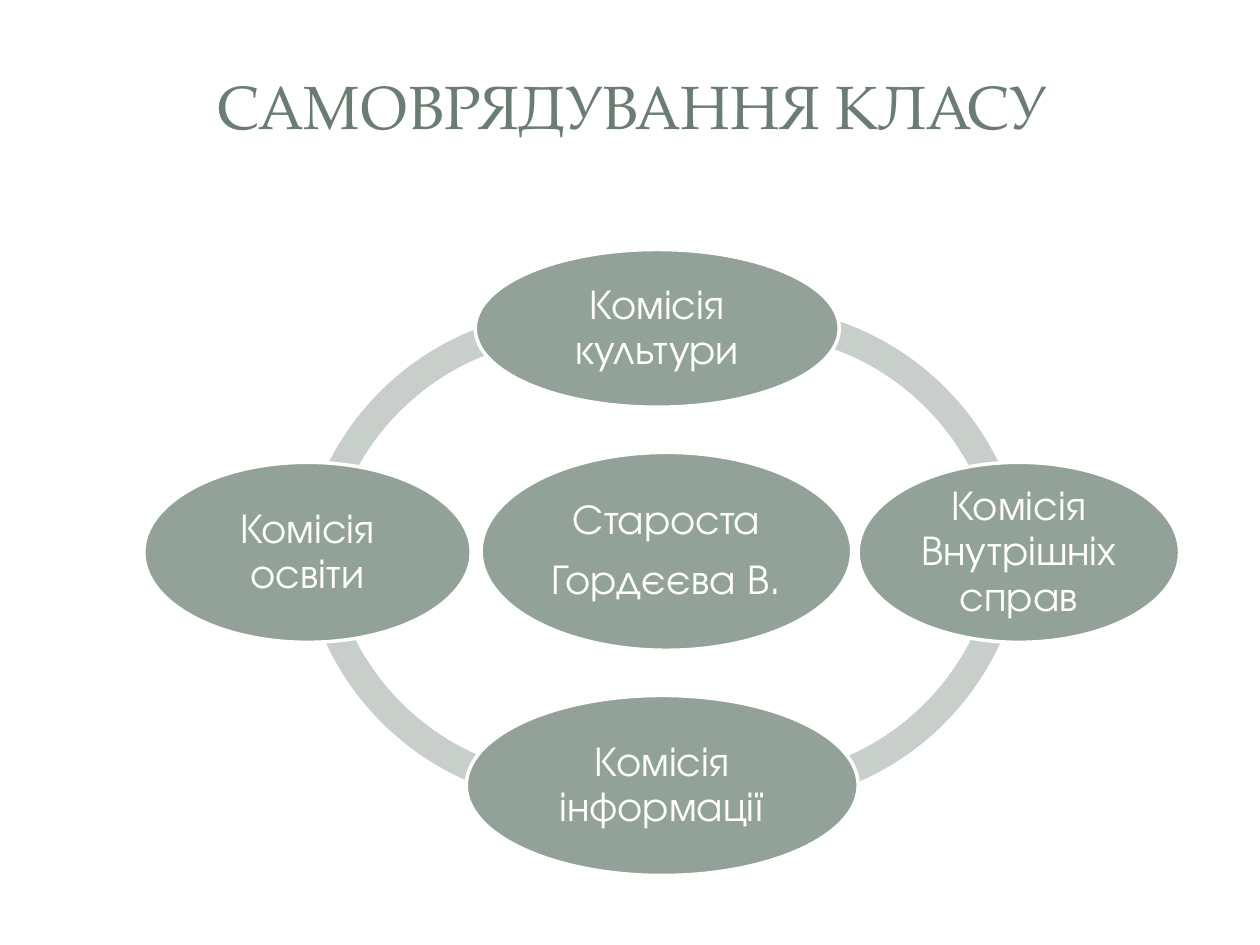
from pptx import Presentation
from pptx.dml.color import RGBColor
from pptx.enum.shapes import MSO_SHAPE
from pptx.enum.text import MSO_ANCHOR, PP_ALIGN
from pptx.util import Cm, Pt


def rgb(value):
    return RGBColor.from_string(value)


def write(sp, text, font, size, color, inset=0.25, line=1.0, after=0):
    """Fill a shape with centred text, one paragraph per line of text."""
    tf = sp.text_frame
    tf.word_wrap = True
    tf.vertical_anchor = MSO_ANCHOR.MIDDLE
    tf.margin_left = tf.margin_right = Cm(inset)
    tf.margin_top = tf.margin_bottom = Cm(min(inset, 0.13))
    tf.text = text
    for p in tf.paragraphs:
        p.alignment = PP_ALIGN.CENTER
        p.line_spacing = line
        p.space_after = Pt(after)
        for r in p.runs:
            r.font.name = font
            r.font.size = Pt(size)
            r.font.color.rgb = rgb(color)


prs = Presentation()
prs.slide_width, prs.slide_height = Cm(25.4), Cm(19.05)
s = prs.slides.add_slide(prs.slide_layouts[6])

title = s.shapes.add_textbox(Cm(1.3), Cm(0.53), Cm(22.86), Cm(3.18))
write(title, "САМОВРЯДУВАННЯ КЛАСУ", "TeX Gyre Pagella", 35, "6B7D72")

# Ring: left, top, start and end adjustment of each arc
ARC_SIZE = Cm(11.23)
arcs = [
    (6.02, 6.25, 112.63, 172.15),
    (6.05, 4.98, 43.33, 104.65),
    (9.45, 5.0, 3.22, 65.07),
    (9.47, 6.17, 150.16, 211.91),
]
for left, top, start, end in arcs:
    sp = s.shapes.add_shape(MSO_SHAPE.BLOCK_ARC, Cm(left), Cm(top), ARC_SIZE, ARC_SIZE)
    for i, value in enumerate((start, end, 0.05)):
        sp.adjustments[i] = value
    sp.shadow.inherit = False
    sp.fill.solid()
    sp.fill.fore_color.rgb = rgb("C8CECA")
    sp.line.fill.background()

# Class leader in the middle, commissions around
nodes = [
    ("Староста\nГордєєва В.", 9.7, 9.12, 7.47, 3.99),
    ("Комісія культури", 9.58, 5.03, 7.34, 3.18),
    ("Комісія Внутрішніх справ", 17.3, 9.32, 6.48, 3.63),
    ("Комісія інформації", 9.4, 14.02, 7.9, 3.63),
    ("Комісія освіти", 2.9, 9.32, 6.6, 3.63),
]
for text, left, top, width, height in nodes:
    sp = s.shapes.add_shape(MSO_SHAPE.OVAL, Cm(left), Cm(top), Cm(width), Cm(height))
    sp.shadow.inherit = False
    sp.fill.solid()
    sp.fill.fore_color.rgb = rgb("93A299")
    sp.line.color.rgb = rgb("FFFFFF")
    sp.line.width = Pt(2)
    write(sp, text, "TeX Gyre Adventor", 24, "FFFFFF", inset=0.08, line=0.9, after=8.4)

prs.save("out.pptx")
